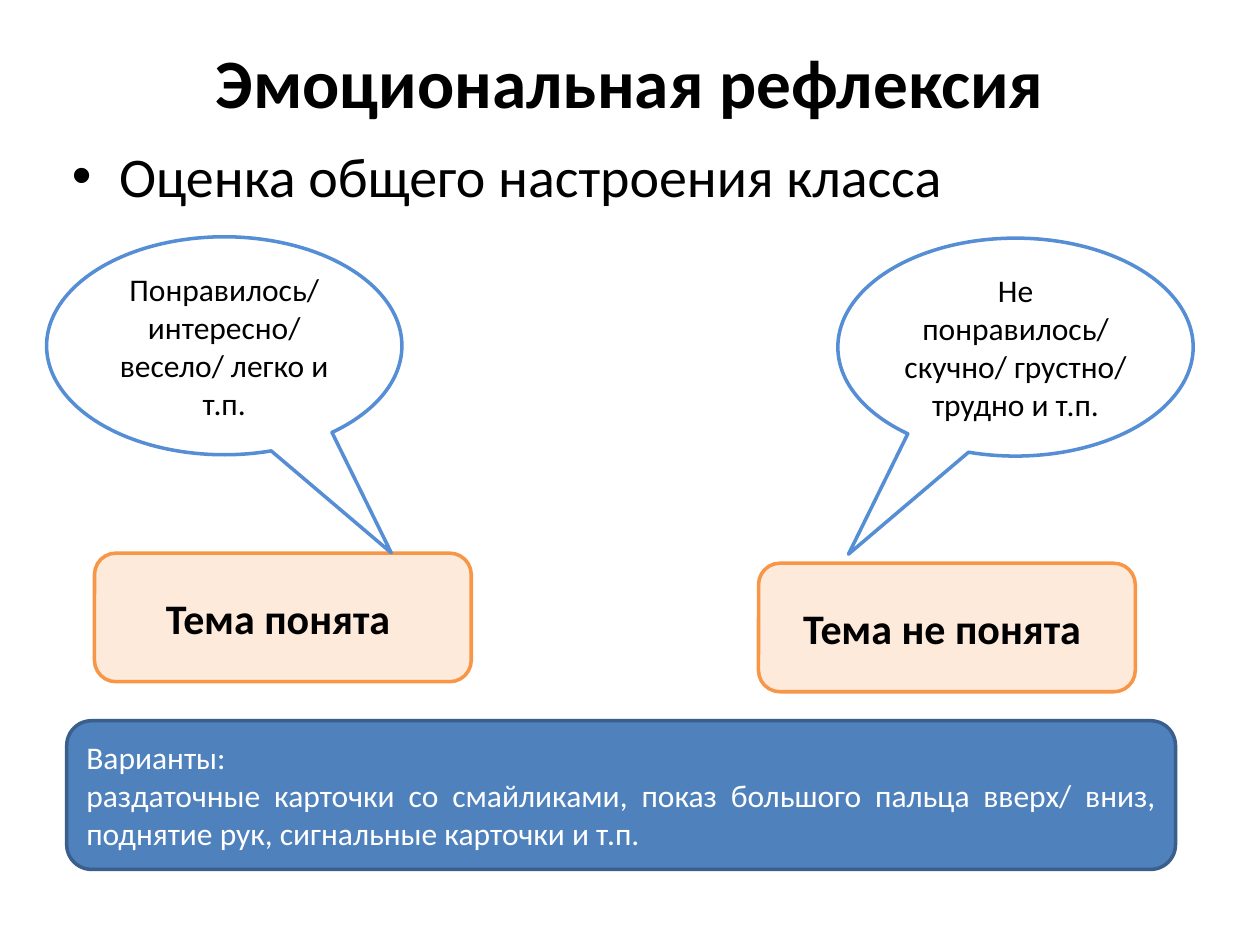
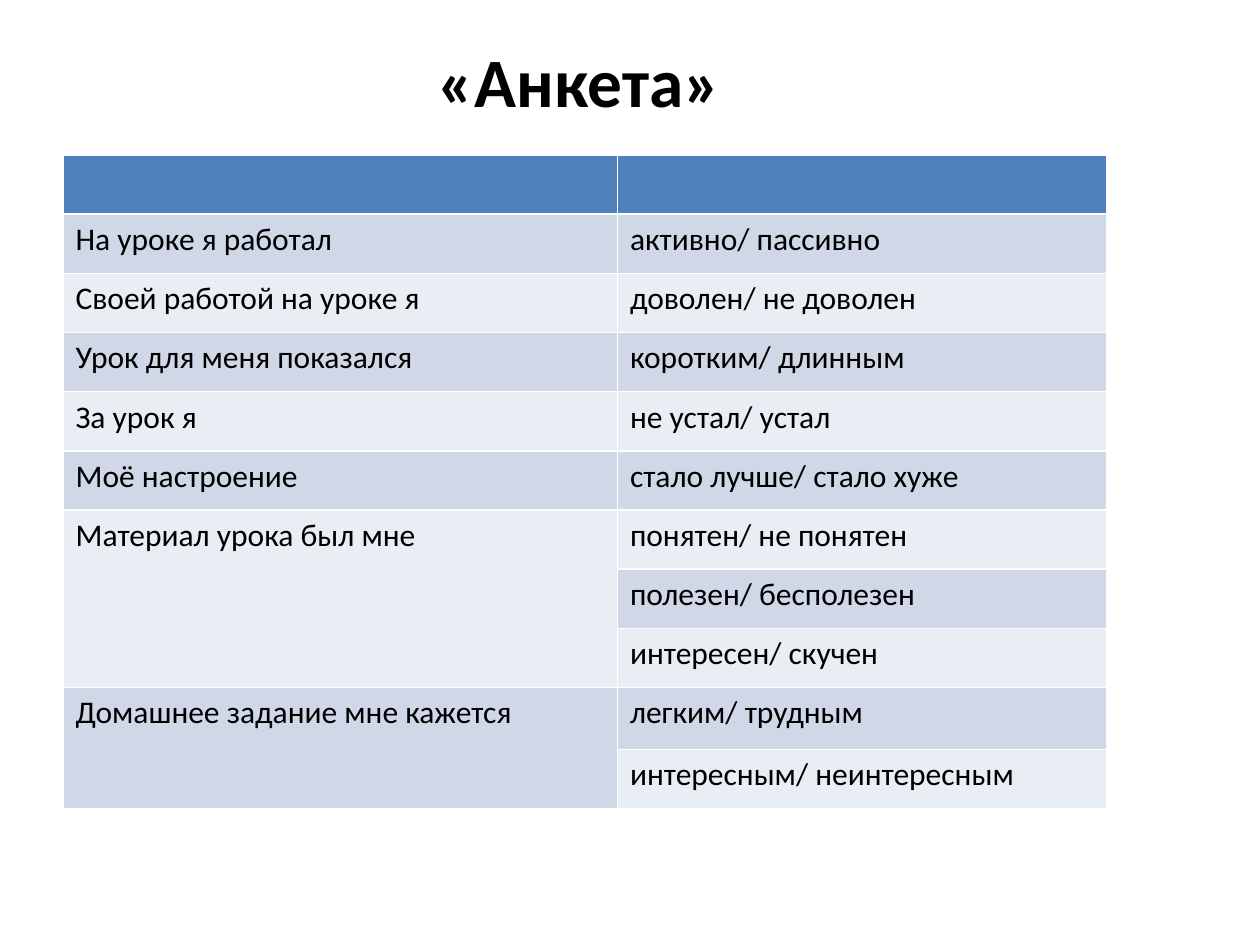
from typing import NamedTuple

from pptx import Presentation
from pptx.dml.color import RGBColor
from pptx.enum import shapes as es, text as et
from pptx.util import Inches, Pt

BLACK = RGBColor(0x00, 0x00, 0x00)
WHITE = RGBColor(0xFF, 0xFF, 0xFF)
BLUE = RGBColor(0x4F, 0x81, 0xBD)
NAVY = RGBColor(0x3A, 0x5F, 0x8C)
SKY = RGBColor(0x55, 0x8E, 0xD5)
PEACH = RGBColor(0xFD, 0xEA, 0xDA)
ORANGE = RGBColor(0xF7, 0x96, 0x46)
BANDS = (RGBColor(0xD0, 0xD8, 0xE8), RGBColor(0xE9, 0xED, 0xF4))

ROUND = es.MSO_SHAPE.ROUNDED_RECTANGLE
BUBBLE = es.MSO_SHAPE.OVAL_CALLOUT
MIDDLE = et.MSO_ANCHOR.MIDDLE
CENTER = et.PP_ALIGN.CENTER
JUSTIFY = et.PP_ALIGN.JUSTIFY

TITLE = {"name": "Calibri", "size": Pt(39.6), "bold": True}
BODY = {"name": "Calibri", "size": Pt(32), "bold": False}
LABEL = {"name": "Calibri", "size": Pt(24), "bold": True}
TEXT = {"name": "Calibri", "size": Pt(18), "bold": False}


class Box(NamedTuple):
    left: float
    top: float
    width: float
    height: float


class Look(NamedTuple):
    kind: es.MSO_SHAPE
    fill: RGBColor
    line: RGBColor
    font: dict
    color: RGBColor = BLACK
    align: et.PP_ALIGN = CENTER


class Item(NamedTuple):
    look: Look
    box: Box
    words: str
    tail: tuple = ()


class Theme(NamedTuple):
    stem: str
    options: tuple


TOPIC = Look(ROUND, PEACH, ORANGE, LABEL)
SPEECH = Look(BUBBLE, WHITE, SKY, TEXT)
NOTE = Look(ROUND, BLUE, NAVY, TEXT, WHITE, JUSTIFY)

ITEMS = (
    Item(TOPIC, Box(0.75, 4.39, 2.99, 1.02), "Тема понята "),
    Item(SPEECH, Box(0.37, 1.88, 2.82, 1.73),
         "Понравилось/ интересно/ весело/ легко и т.п.", (0.47, 0.95)),
    Item(SPEECH, Box(6.65, 1.89, 2.82, 1.73),
         "Не понравилось/ скучно/ грустно/ трудно и т.п.", (-0.47, 0.95)),
    Item(TOPIC, Box(6.02, 4.47, 2.99, 1.02), "Тема не понята "),
    Item(NOTE, Box(0.53, 5.72, 8.8, 1.18),
         "Варианты: \nраздаточные карточки со смайликами, показ большого пальца "
         "вверх/ вниз, поднятие рук, сигнальные карточки и т.п."),
)

THEMES = (
    Theme("На уроке я работал", ("активно/ пассивно",)),
    Theme("Своей работой на уроке я", ("доволен/ не доволен",)),
    Theme("Урок для меня показался", ("коротким/ длинным",)),
    Theme("За урок я", ("не устал/ устал",)),
    Theme("Моё настроение", ("стало лучше/ стало хуже",)),
    Theme("Материал урока был мне",
          ("понятен/ не понятен", "полезен/ бесполезен", "интересен/ скучен")),
    Theme("Домашнее задание мне кажется",
          ("легким/ трудным", "интересным/ неинтересным")),
)


def write(frame, words: str, font: dict, color: RGBColor = BLACK, align=None) -> None:
    frame.text = words
    for para in frame.paragraphs:
        para.alignment = align
        for run in para.runs:
            for key, value in font.items():
                setattr(run.font, key, value)
            run.font.color.rgb = color


def place(shape, box: Box) -> None:
    for key, value in box._asdict().items():
        setattr(shape, key, Inches(value))


def fill_in(shape, box: Box, words: str, font: dict, align=None) -> None:
    place(shape, box)
    shape.text_frame.auto_size = et.MSO_AUTO_SIZE.NONE
    write(shape.text_frame, words, font, align=align)


def start(deck, layout: int, box: Box, words: str):
    slide = deck.slides.add_slide(deck.slide_layouts[layout])
    title = slide.shapes.title
    fill_in(title, box, words, TITLE, CENTER)
    title.text_frame.vertical_anchor = MIDDLE
    return slide


def draw(slide, item: Item) -> None:
    look = item.look
    shape = slide.shapes.add_shape(look.kind, *map(Inches, item.box))
    shape.shadow.inherit = False
    shape.fill.solid()
    shape.fill.fore_color.rgb = look.fill
    shape.line.color.rgb = look.line
    shape.line.width = Pt(2)
    for spot, value in enumerate(item.tail):
        shape.adjustments[spot] = value
    shape.text_frame.word_wrap = True
    shape.text_frame.vertical_anchor = MIDDLE
    write(shape.text_frame, item.words, look.font, look.color, look.align)


def paint(cell, color: RGBColor) -> None:
    cell.fill.solid()
    cell.fill.fore_color.rgb = color


def moods(deck) -> None:
    slide = start(deck, 1, Box(0.5, 0.3, 9, 0.69), "Эмоциональная рефлексия")
    fill_in(slide.placeholders[1], Box(0.47, 1.07, 9, 5.78),
            "Оценка общего настроения класса", BODY)
    for item in ITEMS:
        draw(slide, item)


def survey(deck) -> None:
    slide = start(deck, 5, Box(0.51, 0.36, 8.17, 0.55), "«Анкета»")
    count = 1 + sum(len(theme.options) for theme in THEMES)
    box = Box(0.5, 1.23, 8.28, 5.2)
    grid = slide.shapes.add_table(count, 2, *map(Inches, box)).table
    for col, width in zip(grid.columns, (4.4, 3.88)):
        col.width = Inches(width)
    for num, row in enumerate(grid.rows):
        row.height = Inches(0.49 if num == count - 2 else 0.47)
        for cell in row.cells:
            paint(cell, BANDS[(num - 1) % 2] if num else BLUE)
    num = 1
    for theme in THEMES:
        last = num + len(theme.options) - 1
        if last > num:
            grid.cell(num, 0).merge(grid.cell(last, 0))
        write(grid.cell(num, 0).text_frame, theme.stem, TEXT)
        for step, option in enumerate(theme.options):
            write(grid.cell(num + step, 1).text_frame, option, TEXT)
        num = last + 1


def main() -> None:
    deck = Presentation()
    deck.slide_width, deck.slide_height = Inches(10), Inches(7.5)
    moods(deck)
    survey(deck)
    deck.save("out.pptx")


if __name__ == "__main__":
    main()
